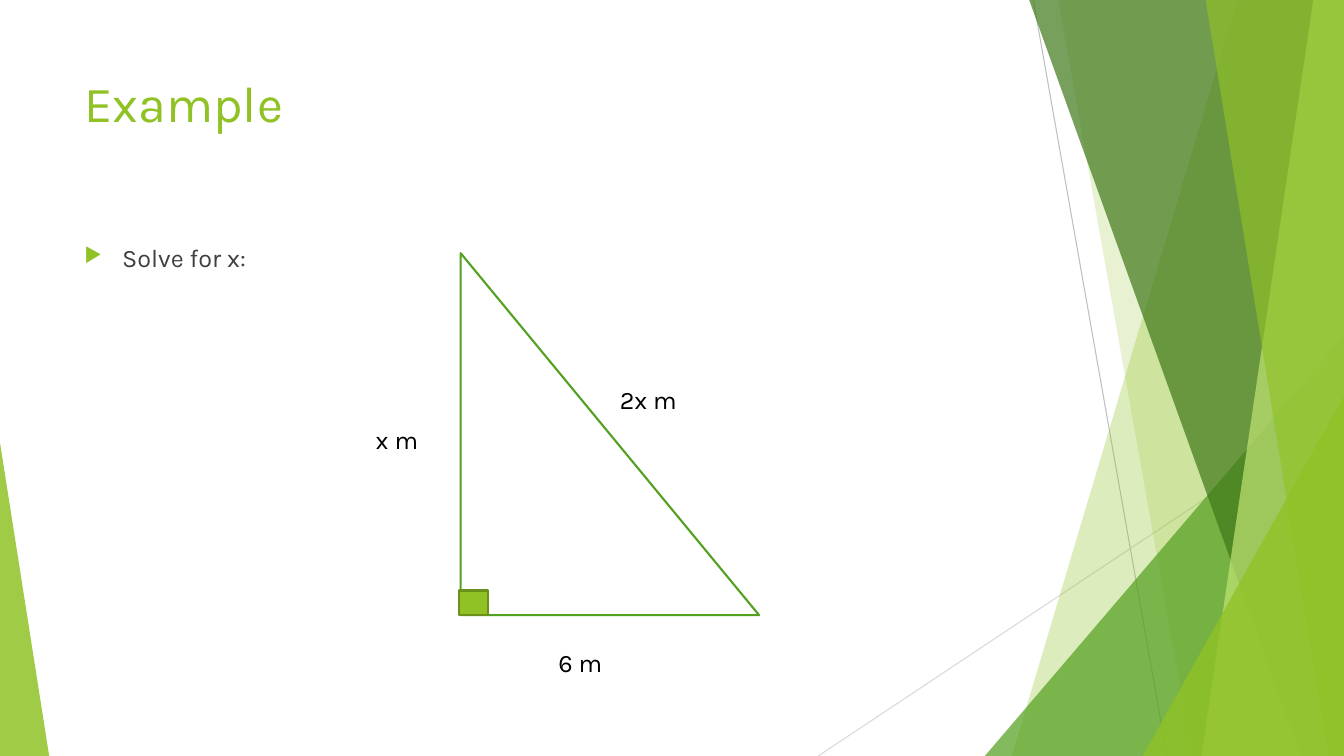
from lxml import etree
from pptx import Presentation
from pptx.dml.color import RGBColor
from pptx.enum.shapes import MSO_CONNECTOR, MSO_SHAPE
from pptx.enum.text import MSO_ANCHOR, MSO_AUTO_SIZE, PP_ALIGN
from pptx.oxml.ns import qn
from pptx.util import Cm, Pt

STRAIGHT = MSO_CONNECTOR.STRAIGHT
TRIANGLE = MSO_SHAPE.ISOSCELES_TRIANGLE
RIGHT_TRIANGLE = MSO_SHAPE.RIGHT_TRIANGLE
RECT = MSO_SHAPE.RECTANGLE
TOP = MSO_ANCHOR.TOP
LEFT = PP_ALIGN.LEFT
FIT_SHAPE = MSO_AUTO_SIZE.SHAPE_TO_FIT_TEXT
NO_FIT = MSO_AUTO_SIZE.NONE

LIME = RGBColor(0x90, 0xC2, 0x26)
GREEN = RGBColor(0x54, 0xA0, 0x21)
FOREST = RGBColor(0x3F, 0x78, 0x19)
PALE = RGBColor(0xC0, 0xE4, 0x74)
OLIVE = RGBColor(0x6B, 0x90, 0x1C)
GREY = RGBColor(0xBF, 0xBF, 0xBF)
SILVER = RGBColor(0xD9, 0xD9, 0xD9)
DARK = RGBColor(0x40, 0x40, 0x40)
BLACK = RGBColor(0, 0, 0)
WHITE = RGBColor(0xFF, 0xFF, 0xFF)

FONT = "Karla"
WIDE, HIGH = 33.87, 19.05


def paint(shape, color, alpha=100, edge=None):
    """Fill a shape with a given opacity in percent and outline it if asked."""
    shape.shadow.inherit = False
    shape.fill.solid()
    shape.fill.fore_color.rgb = color
    if alpha < 100:
        tint = shape.element.spPr.find(qn("a:solidFill"))[0]
        etree.SubElement(tint, qn("a:alpha"), val=str(alpha * 1000))
    if edge is None:
        shape.line.fill.background()
    else:
        shape.line.color.rgb = edge
        shape.line.width = Pt(1.5)


def add_line(slide, start, end, color):
    ends = [Cm(n) for n in (*start, *end)]
    line = slide.shapes.add_connector(STRAIGHT, *ends)
    line.line.color.rgb = color
    line.line.width = Pt(0.75)
    etree.SubElement(line.element.spPr, qn("a:effectLst"))


def add_blade(slide, top, foot, color, alpha):
    """Add a panel whose slanted left edge runs from top to foot."""
    rim = -0.02
    pen = slide.shapes.build_freeform(Cm(top), Cm(rim))
    corners = [(WIDE, rim), (WIDE, HIGH), (foot, HIGH)]
    pen.add_line_segments([(Cm(x), Cm(y)) for x, y in corners], close=True)
    paint(pen.convert_to_shape(), color, alpha)


def add_shape(slide, kind, box, color, alpha=100, edge=None):
    shape = slide.shapes.add_shape(kind, *[Cm(n) for n in box])
    paint(shape, color, alpha, edge)
    return shape


def add_spike(slide, left, top, width, apex, color, alpha):
    """Add a triangle that stands on the slide's bottom edge."""
    box = (left, top, width, HIGH - top)
    add_shape(slide, TRIANGLE, box, color, alpha).adjustments[0] = apex


def set_text(shape, text, size, color):
    frame = shape.text_frame
    frame.text = text
    frame.word_wrap = True
    frame.vertical_anchor = TOP
    para = frame.paragraphs[0]
    para.alignment = LEFT
    font = para.runs[0].font
    font.name = FONT
    font.size = Pt(size)
    font.color.rgb = color
    return para


def add_text(slide, text, box, color):
    shape = slide.shapes.add_textbox(*[Cm(n) for n in box])
    return shape, set_text(shape, text, 18, color)


def add_bullet(para):
    para.space_before = Pt(10)
    props = para._p.get_or_add_pPr()
    indent = Cm(0.95)
    props.set("marL", str(indent))
    props.set("indent", str(-indent))
    tint = etree.SubElement(props, qn("a:buClr"))
    etree.SubElement(tint, qn("a:srgbClr"), val=str(LIME))
    etree.SubElement(props, qn("a:buSzPct"), val="80000")
    etree.SubElement(props, qn("a:buChar"), char="▶")


def add_decor(slide):
    add_line(slide, (26.04, 0), (29.41, HIGH), GREY)
    add_line(slide, (WIDE, 10.24), (20.62, HIGH), SILVER)
    add_blade(slide, 31.19, 25.5, LIME, 30)
    add_blade(slide, 26.67, 30.05, LIME, 20)
    add_spike(slide, 24.82, 8.46, 9.05, 1, GREEN, 72)
    add_blade(slide, 25.93, 32.79, FOREST, 70)
    add_blade(slide, 33.1, 30.28, PALE, 70)
    add_blade(slide, 30.38, 33.48, LIME, 65)
    add_spike(slide, 28.8, 9.98, 5.07, 1, LIME, 80)
    add_spike(slide, 0, 11.15, 1.24, 0, LIME, 85)


def add_title(slide, text):
    title = slide.shapes.title
    title.left, title.top = Cm(1.88), Cm(1.7)
    title.width, title.height = Cm(23.88), Cm(3.66)
    set_text(title, text, 36, LIME)
    title.text_frame.auto_size = NO_FIT
    # Bring the title in front of the decoration
    title.element.getparent().append(title.element)


def main():
    deck = Presentation()
    deck.slide_width, deck.slide_height = Cm(WIDE), Cm(HIGH)
    slide = deck.slides.add_slide(deck.slide_layouts[5])

    add_decor(slide)
    add_title(slide, "Example")
    _, task = add_text(slide, "Solve for x:", (1.88, 5.99, 23.88, 10.77), DARK)
    add_bullet(task)

    add_shape(slide, RIGHT_TRIANGLE, (11.61, 6.38, 7.52, 9.12), WHITE, edge=GREEN)
    add_shape(slide, RECT, (11.56, 14.88, 0.74, 0.61), LIME, edge=OLIVE)
    sides = [
        ("2x m", 15.37, 9.55, 3.76),
        ("6 m", 13.82, 16.18, 2.36),
        ("x m", 9.22, 10.57, 1.73),
    ]
    for text, left, top, width in sides:
        label, _ = add_text(slide, text, (left, top, width, 1.02), BLACK)
        label.text_frame.auto_size = FIT_SHAPE

    deck.save("out.pptx")


if __name__ == "__main__":
    main()
